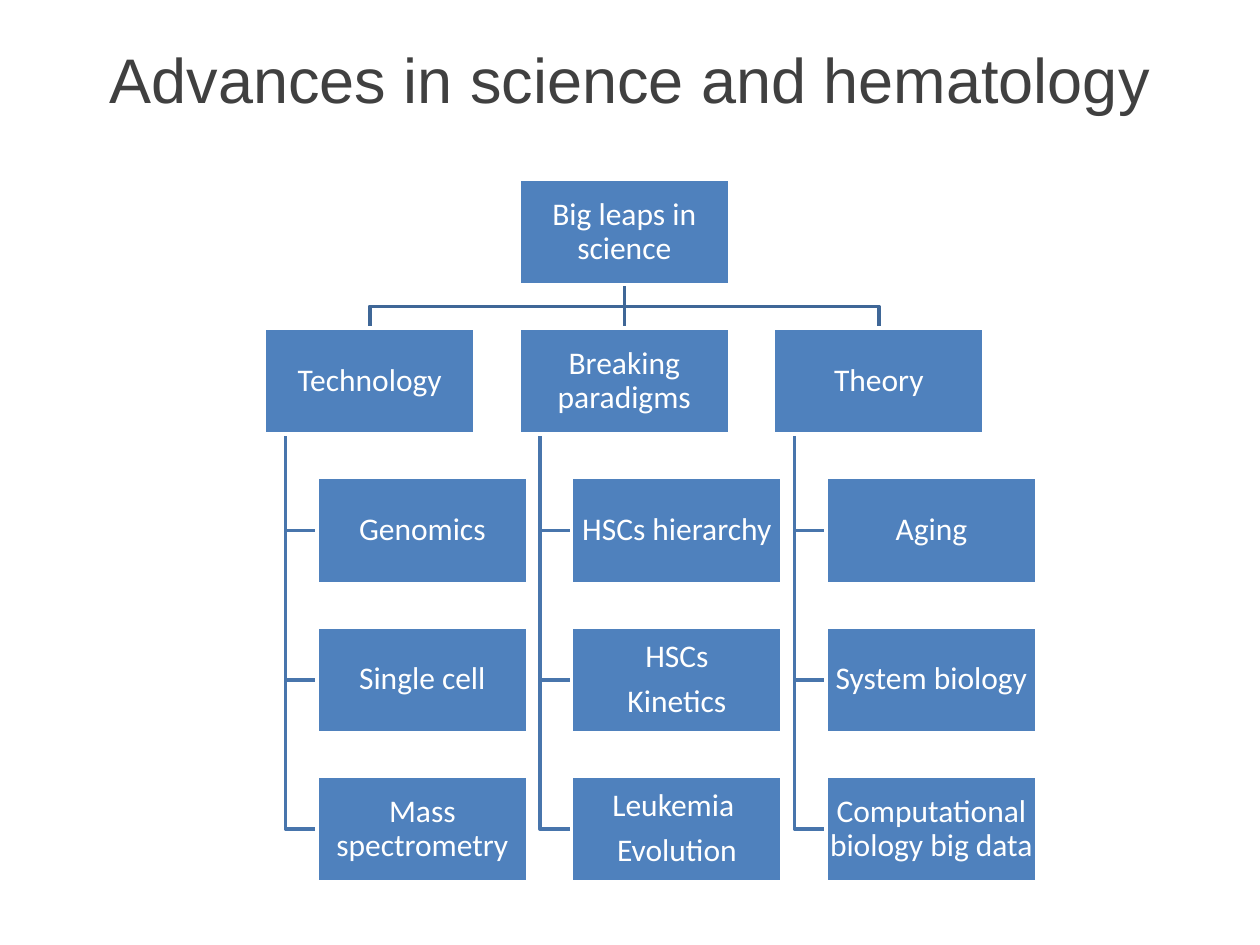
from dataclasses import dataclass

from lxml.etree import SubElement
from pptx import Presentation
from pptx.dml.color import RGBColor
from pptx.enum.shapes import MSO_CONNECTOR, MSO_SHAPE
from pptx.enum.text import MSO_ANCHOR, PP_ALIGN
from pptx.oxml.ns import qn
from pptx.util import Inches, Pt

SLIDE_WIDTH, SLIDE_HEIGHT = 10, 7.5
BOX_WIDTH, BOX_HEIGHT = 1.67, 0.84
GRID_LEFT, GRID_TOP = 2.1, 1.42
COLUMN_PITCH = 2.02
ROW_PITCH = (6.16 - GRID_TOP) / 4
CHILD_INDENT = BOX_WIDTH / 4
STEM_INDENT = BOX_WIDTH / 10

BOX_FILL, WHITE, TITLE_COLOR = "4F81BD", "FFFFFF", "404040"
TRUNK_COLOR, BRANCH_COLOR = "3F6797", "4875AC"

Point = tuple[float, float]


@dataclass(frozen=True)
class Branch:
    heading: str
    topics: tuple[str, ...]


BRANCHES = (
    Branch("Technology", ("Genomics", "Single cell", "Mass spectrometry")),
    Branch("Breaking paradigms",
           ("HSCs hierarchy", "HSCs\nKinetics", "Leukemia \nEvolution")),
    Branch("Theory",
           ("Aging", "System biology", "Computational biology big data")),
)


@dataclass(frozen=True)
class Cell:
    column: int
    row: int
    indent: float = 0

    @property
    def left(self) -> float:
        return GRID_LEFT + self.column * COLUMN_PITCH + self.indent

    @property
    def top(self) -> float:
        return GRID_TOP + self.row * ROW_PITCH

    @property
    def center(self) -> float:
        return self.left + BOX_WIDTH / 2

    @property
    def middle(self) -> float:
        return self.top + BOX_HEIGHT / 2

    @property
    def bottom(self) -> float:
        return self.top + BOX_HEIGHT


def rgb(color: str) -> RGBColor:
    return RGBColor.from_string(color)


def style_line(shape, color: str) -> None:
    shape.line.color.rgb = rgb(color)
    shape.line.width = Pt(2)


def write_text(frame, text: str, font: str, size: float, color: str) -> None:
    frame.word_wrap = True
    frame.vertical_anchor = MSO_ANCHOR.MIDDLE
    frame.text = text
    for para in frame.paragraphs:
        para.alignment = PP_ALIGN.CENTER
        para.font.name = font
        para.font.size = Pt(size)
        para.font.color.rgb = rgb(color)


def draw_title(slide, text: str) -> None:
    margin = SLIDE_WIDTH / 20
    box = slide.shapes.add_textbox(
        Inches(margin), 0, Inches(SLIDE_WIDTH - 2 * margin),
        Inches(SLIDE_HEIGHT / 6))
    write_text(box.text_frame, text, "Arial", 36, TITLE_COLOR)


def draw_box(slide, cell: Cell, text: str) -> None:
    box = slide.shapes.add_shape(
        MSO_SHAPE.RECTANGLE, Inches(cell.left), Inches(cell.top),
        Inches(BOX_WIDTH), Inches(BOX_HEIGHT))
    box.shadow.inherit = False
    box.fill.solid()
    box.fill.fore_color.rgb = rgb(BOX_FILL)
    style_line(box, WHITE)
    frame = box.text_frame
    frame.margin_left = frame.margin_right = Inches(0.01)
    frame.margin_top = frame.margin_bottom = Inches(0.01)
    write_text(frame, text, "Calibri", 18, WHITE)
    for para in frame.paragraphs:
        para.line_spacing = 0.9
        para.space_after = Pt(6.3)


def draw_elbow(slide, points: list[Point], color: str) -> None:
    """Draw an open bent line through the points."""
    start, *rest = [(Inches(x), Inches(y)) for x, y in points]
    builder = slide.shapes.build_freeform(*start)
    builder.add_line_segments(rest, close=False)
    elbow = builder.convert_to_shape()
    elbow.shadow.inherit = False
    elbow.fill.background()
    style_line(elbow, color)


def draw_straight(slide, start: Point, end: Point, color: str) -> None:
    line = slide.shapes.add_connector(
        MSO_CONNECTOR.STRAIGHT, *(Inches(value) for value in start + end))
    style_line(line, color)
    SubElement(line._element.spPr, qn("a:effectLst"))


def link_root(slide, root: Cell, heading: Cell) -> None:
    start, end = (root.center, root.bottom), (heading.center, heading.top)
    if root.column == heading.column:
        draw_straight(slide, start, end, TRUNK_COLOR)
        return
    turn = (root.bottom + heading.top) / 2
    draw_elbow(slide, [start, (root.center, turn), (heading.center, turn), end],
               TRUNK_COLOR)


def link_topic(slide, heading: Cell, topic: Cell) -> None:
    stem = heading.left + STEM_INDENT
    draw_elbow(slide, [(stem, heading.bottom), (stem, topic.middle),
                       (topic.left, topic.middle)], BRANCH_COLOR)


def draw_tree(slide, root_text: str, branches: tuple[Branch, ...]) -> None:
    root = Cell(len(branches) // 2, 0)
    boxes = [(root, root_text)]
    for column, branch in enumerate(branches):
        heading = Cell(column, 1)
        boxes.append((heading, branch.heading))
        link_root(slide, root, heading)
        for row, text in enumerate(branch.topics, start=2):
            topic = Cell(column, row, CHILD_INDENT)
            boxes.append((topic, text))
            link_topic(slide, heading, topic)
    for cell, text in boxes:
        draw_box(slide, cell, text)


def main() -> None:
    deck = Presentation()
    deck.slide_width, deck.slide_height = Inches(SLIDE_WIDTH), Inches(SLIDE_HEIGHT)
    page = deck.slides.add_slide(deck.slide_layouts[6])
    draw_title(page, "Advances in science and hematology")
    draw_tree(page, "Big leaps in science", BRANCHES)
    deck.save("out.pptx")


if __name__ == "__main__":
    main()
